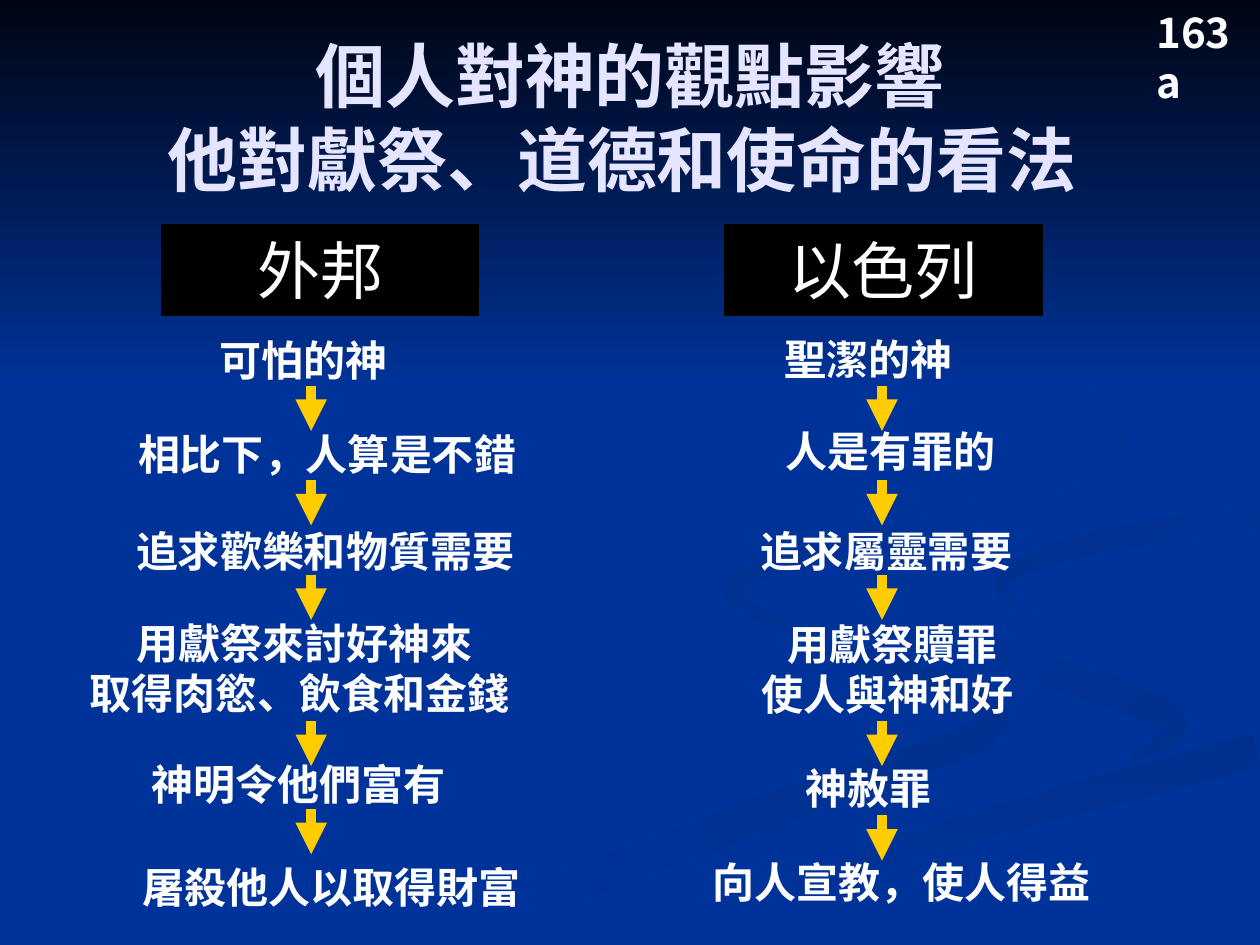
from dataclasses import dataclass
from math import hypot, pi, sin

from lxml.etree import SubElement
from pptx import Presentation
from pptx.dml.color import RGBColor
from pptx.enum.shapes import MSO_CONNECTOR, MSO_SHAPE
from pptx.enum.text import MSO_ANCHOR as Anchor, PP_ALIGN as Align
from pptx.oxml.ns import qn
from pptx.util import Inches, Pt

FONT = "Noto Sans CJK JP"
BLUE = RGBColor(0x00, 0x33, 0x99)
SHADE = RGBColor(0x00, 0x30, 0x90)
NIGHT = RGBColor(0x00, 0x05, 0x14)
LAVENDER = RGBColor(0xE5, 0xE5, 0xFF)
WHITE = RGBColor(0xFF, 0xFF, 0xFF)
BLACK = RGBColor(0x00, 0x00, 0x00)
GOLD = RGBColor(0xFF, 0xCC, 0x00)
ARROW_LENGTH = 0.36
ARROW_TOPS = [3.06, 3.81, 4.56, 5.72]
STEPS = 8

Point = tuple[float, float]


@dataclass
class Ribbon:
    spine: list[Point]
    width: float
    start: RGBColor
    end: RGBColor
    angle: int
    open_end: bool = False


@dataclass
class Label:
    text: str
    left: float
    top: float
    width: float
    height: float
    anchor: Anchor = Anchor.TOP


@dataclass
class Column:
    heading: str
    heading_left: float
    arrow_x: float
    last_arrow_top: float
    labels: list[Label]


RIBBONS = [
    Ribbon([(5.72, 4.65), (6.5, 5.1), (7.9, 5.7), (6.2, 6.4), (3.3, 7.49)],
           0.3, BLUE, SHADE, 0, True),
    Ribbon([(7.24, 4.64), (8, 5.2), (9.3, 5.7), (8.94, 6.05)], 0.25, BLUE, SHADE, 315),
    Ribbon([(5.3, 7.49), (7.4, 6.67), (9.98, 5.95)], 0.28, SHADE, BLUE, 270, True),
    Ribbon([(8.26, 4.96), (7.95, 4.63), (8.6, 4.33), (9.98, 4.11)],
           0.2, SHADE, BLUE, 315, True),
    Ribbon([(7.62, 2.33), (8.9, 3.35), (7.8, 4.05), (5.86, 4.6), (6.22, 5)],
           0.18, SHADE, BLUE, 315),
]

COLUMNS = [
    Column("外邦", 1.28, 2.47, 6.42, [
        Label("可怕的神", 1.31, 2.65, 2.2, 0.41, Anchor.MIDDLE),
        Label("相比下，人算是不錯", -0.08, 3.35, 5.35, 0.69),
        Label("追求歡樂和物質需要", 0.08, 4.12, 5, 0.53),
        Label("用獻祭來討好神來\n取得肉慾、飲食和金錢 ", 0.25, 4.85, 4.33, 0.89),
        Label("神明令他們富有", 0.08, 5.97, 4.58, 0.53),
        Label("屠殺他人以取得財富", 0.42, 6.79, 4.42, 0.55),
    ]),
    Column("以色列", 5.75, 7, 6.47, [
        Label("聖潔的神 ", 5.92, 2.6, 2.02, 0.53),
        Label("人是有罪的", 4.67, 3.33, 4.79, 0.72),
        Label("追求屬靈需要 ", 4.8, 4.12, 4.54, 0.63),
        Label("用獻祭贖罪\n使人與神和好 ", 4.75, 4.86, 4.67, 0.97),
        Label("神赦罪 ", 4.83, 6, 4.2, 0.53),
        Label("向人宣教，使人得益 ", 4.67, 6.75, 5.05, 0.67),
    ]),
]


def write_text(shape, text: str, *, size: int = 24, color: RGBColor = WHITE,
               bold: bool = True, align: Align = Align.CENTER,
               anchor: Anchor = Anchor.TOP) -> None:
    frame = shape.text_frame
    frame.word_wrap = True
    frame.vertical_anchor = anchor
    frame.text = text
    for paragraph in frame.paragraphs:
        paragraph.alignment = align
        for run in paragraph.runs:
            run.font.size = Pt(size)
            run.font.bold = bold
            run.font.name = FONT
            run.font.color.rgb = color
            SubElement(run.font._element, qn("a:ea"), typeface=FONT)


def add_label(slide, label: Label, **text_format) -> None:
    box = slide.shapes.add_textbox(Inches(label.left), Inches(label.top),
                                   Inches(label.width), Inches(label.height))
    write_text(box, label.text, anchor=label.anchor, **text_format)


def fill_gradient(shape, start: RGBColor, end: RGBColor, angle: int) -> None:
    shape.shadow.inherit = False
    shape.line.fill.background()
    shape.fill.gradient()
    shape.fill.gradient_angle = angle
    for stop, color in zip(shape.fill.gradient_stops, (start, end)):
        stop.color.rgb = color


def spline(before: float, start: float, end: float, after: float, t: float) -> float:
    return start + t / 2 * (end - before + t * (
        2 * before - 5 * start + 4 * end - after
        + t * (3 * (start - end) + after - before)))


def smooth_curve(spine: list[Point]) -> list[Point]:
    padded = [spine[0], *spine, spine[-1]]
    curve = [tuple(spline(*axis, step / STEPS) for axis in zip(*padded[i:i + 4]))
             for i in range(len(spine) - 1) for step in range(STEPS)]
    return [*curve, spine[-1]]


def ribbon_outline(ribbon: Ribbon) -> list[Point]:
    curve = smooth_curve(ribbon.spine)
    last = len(curve) - 1
    reach = pi / 2 if ribbon.open_end else pi
    upper, lower = [], []
    for i, (x, y) in enumerate(curve):
        (x0, y0), (x1, y1) = curve[max(i - 1, 0)], curve[min(i + 1, last)]
        length = hypot(x1 - x0, y1 - y0)
        half = ribbon.width / 2 * sin(reach * i / last)
        dx, dy = half * (y1 - y0) / length, half * (x1 - x0) / length
        upper.append((min(x + dx, 10), min(y - dy, 7.5)))
        lower.append((min(x - dx, 10), min(y + dy, 7.5)))
    return upper + lower[::-1]


def add_ribbon(slide, ribbon: Ribbon) -> None:
    first, *rest = [(Inches(x), Inches(y)) for x, y in ribbon_outline(ribbon)]
    builder = slide.shapes.build_freeform(*first)
    builder.add_line_segments(rest, close=True)
    fill_gradient(builder.convert_to_shape(), ribbon.start, ribbon.end, ribbon.angle)


def add_heading(slide, text: str, left: float) -> None:
    shape = slide.shapes.add_shape(MSO_SHAPE.RECTANGLE, Inches(left), Inches(1.78),
                                   Inches(2.52), Inches(0.72))
    shape.shadow.inherit = False
    shape.fill.solid()
    shape.fill.fore_color.rgb = BLACK
    shape.line.color.rgb = BLACK
    shape.line.width = Pt(0.75)
    write_text(shape, text, size=36, bold=False, anchor=Anchor.MIDDLE)


def add_arrow(slide, x: float, top: float) -> None:
    arrow = slide.shapes.add_connector(MSO_CONNECTOR.STRAIGHT, Inches(x), Inches(top),
                                       Inches(x), Inches(top + ARROW_LENGTH))
    arrow.line.color.rgb = GOLD
    arrow.line.width = Pt(6)
    SubElement(arrow.line._get_or_add_ln(), qn("a:tailEnd"), type="triangle")
    SubElement(arrow._element.spPr, qn("a:effectLst"))


def main() -> None:
    presentation = Presentation()
    presentation.slide_width, presentation.slide_height = Inches(10), Inches(7.5)
    slide = presentation.slides.add_slide(presentation.slide_layouts[6])
    slide.background.fill.solid()
    slide.background.fill.fore_color.rgb = BLUE
    for ribbon in RIBBONS:
        add_ribbon(slide, ribbon)
    sky = slide.shapes.add_shape(MSO_SHAPE.RECTANGLE, 0, 0, Inches(10), Inches(3.08))
    fill_gradient(sky, NIGHT, BLUE, 270)
    title = "個人對神的觀點影響\v他對獻祭、道德和使命的看法 "
    add_label(slide, Label(title, 0.5, 0.3, 9, 1.25, Anchor.MIDDLE), size=40, color=LAVENDER)
    for column in COLUMNS:
        add_heading(slide, column.heading, column.heading_left)
        for label in column.labels:
            add_label(slide, label)
        for top in [*ARROW_TOPS, column.last_arrow_top]:
            add_arrow(slide, column.arrow_x, top)
    add_label(slide, Label("163a", 9.08, 0, 0.86, 0.5), align=Align.LEFT)
    presentation.save("out.pptx")


if __name__ == "__main__":
    main()
